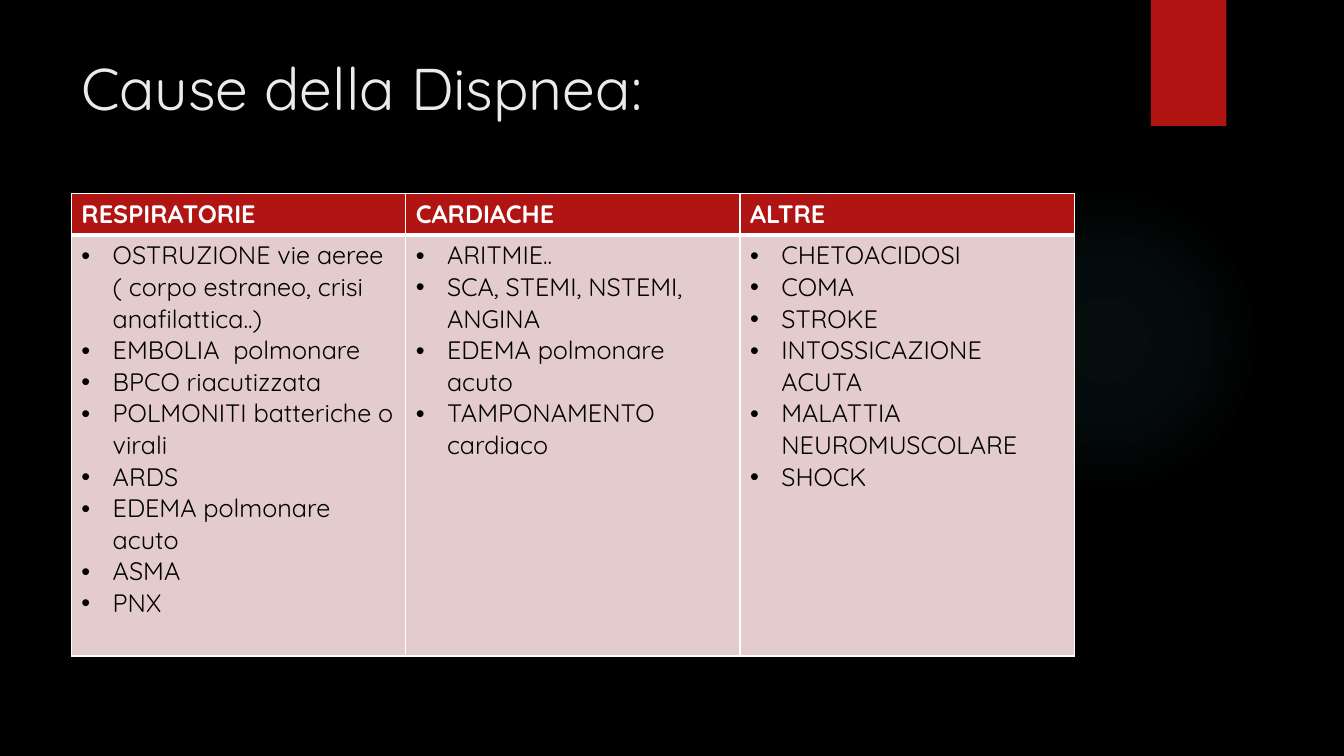
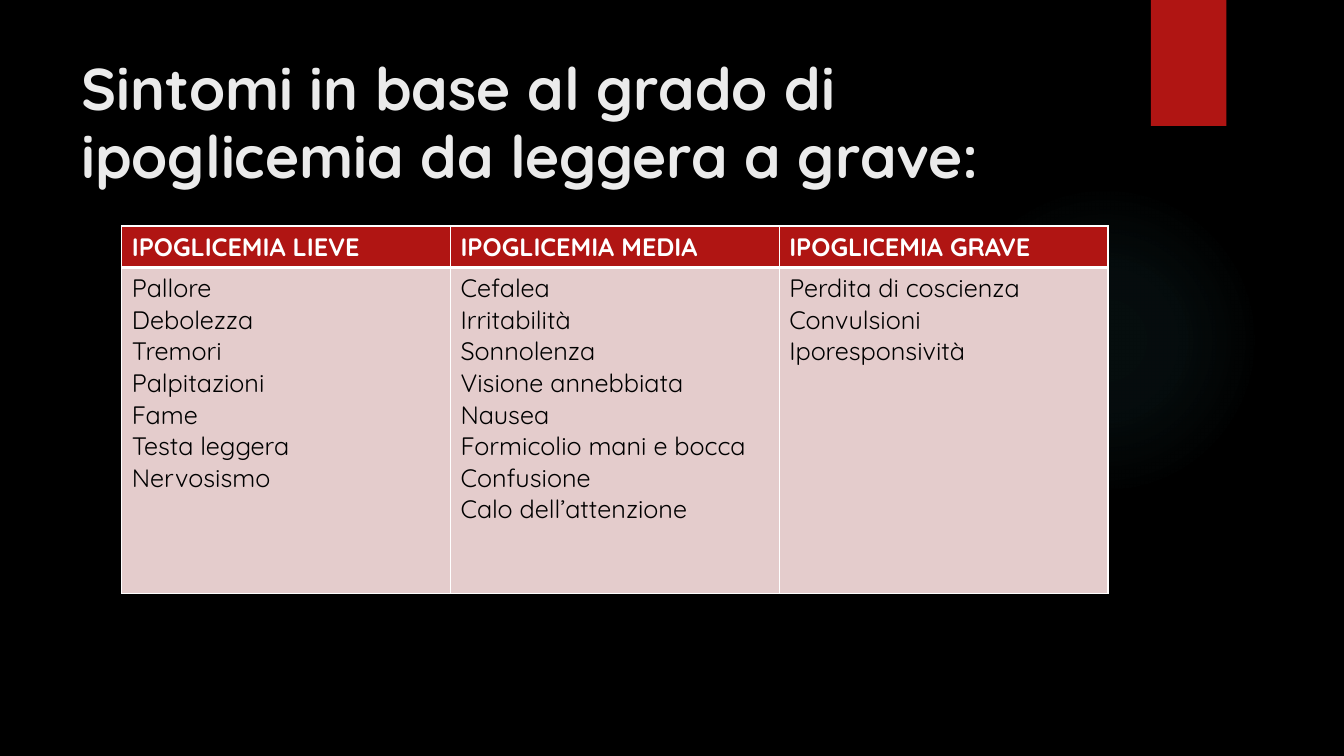
from lxml import etree
from pptx import Presentation
from pptx.dml.color import RGBColor
from pptx.enum.shapes import MSO_SHAPE
from pptx.enum.text import MSO_ANCHOR
from pptx.oxml import parse_xml
from pptx.oxml.ns import nsdecls, qn
from pptx.util import Inches, Pt

ELLIPSE = MSO_SHAPE.OVAL
RECTANGLE = MSO_SHAPE.RECTANGLE
TOP = MSO_ANCHOR.TOP

SLIDE_WIDTH = Inches(13.33)
SLIDE_HEIGHT = Inches(7.5)
COLUMN = SLIDE_WIDTH / 160
ROW = SLIDE_HEIGHT / 90

FONT = "Quicksand"
BLACK = "000000"
WHITE = "FFFFFF"
RED = "B01513"
PINK = "E4CCCC"
TITLE_COLOUR = "EBEBEB"
GLOW_COLOUR = "50B9C1"
GLOW_STOPS = [(0, 7), (36, 6), (69, 0)]

GLOW_BOX = (113, 22, 37, 37)
TAB_BOX = (137, 0, 9, 15)
TITLE_BOX = (8.5, 6, 123.5, 18.4)
HEADER_ROWS = 4.95
BULLET_INDENT = Inches(0.31)

SLIDES = [
    {
        "title": "Cause della Dispnea:",
        "bold": False,
        "box": (8.5, 23, 119.4, 55.1),
        "bullets": True,
        "columns": {
            "RESPIRATORIE": [
                "OSTRUZIONE vie aeree ( corpo estraneo, crisi anafilattica..)",
                "EMBOLIA  polmonare",
                "BPCO riacutizzata",
                "POLMONITI batteriche o virali",
                "ARDS",
                "EDEMA polmonare acuto",
                "ASMA",
                "PNX",
            ],
            "CARDIACHE": [
                "ARITMIE..",
                "SCA, STEMI, NSTEMI, ANGINA",
                "EDEMA polmonare acuto",
                "TAMPONAMENTO cardiaco",
            ],
            "ALTRE": [
                "CHETOACIDOSI",
                "COMA",
                "STROKE",
                "INTOSSICAZIONE ACUTA",
                "MALATTIA NEUROMUSCOLARE",
                "SHOCK",
            ],
        },
    },
    {
        "title": "Sintomi in base al grado di ipoglicemia da leggera a grave:",
        "bold": True,
        "box": (14.5, 26.9, 117.4, 43.8),
        "bullets": False,
        "columns": {
            "IPOGLICEMIA LIEVE": [
                "Pallore",
                "Debolezza",
                "Tremori",
                "Palpitazioni",
                "Fame",
                "Testa leggera",
                "Nervosismo",
            ],
            "IPOGLICEMIA MEDIA": [
                "Cefalea",
                "Irritabilità",
                "Sonnolenza",
                "Visione annebbiata",
                "Nausea",
                "Formicolio mani e bocca",
                "Confusione",
                "Calo dell’attenzione",
            ],
            "IPOGLICEMIA GRAVE": [
                "Perdita di coscienza",
                "Convulsioni",
                "Iporesponsività",
            ],
        },
    },
]


def colour(value):
    return RGBColor.from_string(value)


def place(box):
    left, top, width, height = box
    return (round(left * COLUMN), round(top * ROW),
            round(width * COLUMN), round(height * ROW))


def add_bullet(paragraph):
    properties = paragraph._p.get_or_add_pPr()
    properties.set("marL", str(BULLET_INDENT))
    properties.set("indent", str(-BULLET_INDENT))
    etree.SubElement(properties, qn("a:buFont")).set("typeface", "Arial")
    etree.SubElement(properties, qn("a:buChar")).set("char", "•")


def write_text(frame, lines, *, size=18, color=BLACK, bold=False,
               bullets=False, spacing=None):
    frame.word_wrap = True
    for index, line in enumerate(lines):
        paragraph = frame.add_paragraph() if index else frame.paragraphs[0]
        if bullets:
            add_bullet(paragraph)
        if spacing:
            paragraph.line_spacing = spacing
        run = paragraph.add_run()
        run.text = line
        run.font.name = FONT
        run.font.size = Pt(size)
        run.font.bold = bold
        run.font.color.rgb = colour(color)


def add_plain_shape(slide, kind, box, fill):
    shape = slide.shapes.add_shape(kind, *place(box))
    shape.shadow.inherit = False
    shape.line.fill.background()
    shape.fill.solid()
    shape.fill.fore_color.rgb = colour(fill)
    return shape


def add_glow(slide, box):
    shape = add_plain_shape(slide, ELLIPSE, box, GLOW_COLOUR)
    stops = "".join(
        f'<a:gs pos="{position * 1000}"><a:srgbClr val="{GLOW_COLOUR}">'
        f'<a:alpha val="{opacity * 1000}"/></a:srgbClr></a:gs>'
        for position, opacity in GLOW_STOPS)
    gradient = parse_xml(
        f'<a:gradFill {nsdecls("a")} rotWithShape="1"><a:gsLst>{stops}</a:gsLst>'
        '<a:path path="circle"><a:fillToRect l="50000" t="50000" r="50000" '
        'b="50000"/></a:path></a:gradFill>')
    properties = shape._element.spPr
    properties.replace(properties.find(qn("a:solidFill")), gradient)


def add_title(slide, box, text, bold):
    frame = slide.shapes.add_textbox(*place(box)).text_frame
    frame.vertical_anchor = TOP
    write_text(frame, [text], size=42, color=TITLE_COLOUR, bold=bold, spacing=0.97)


def set_borders(cell, **widths):
    properties = cell._tc.get_or_add_tcPr()
    for side in "LRTB":
        properties.append(parse_xml(
            f'<a:ln{side} {nsdecls("a")} w="{Pt(widths.get(side, 1))}"><a:solidFill>'
            f'<a:srgbClr val="{WHITE}"/></a:solidFill></a:ln{side}>'))


def fill_cell(cell, lines, fill, borders, **text_format):
    set_borders(cell, **borders)
    cell.fill.solid()
    cell.fill.fore_color.rgb = colour(fill)
    write_text(cell.text_frame, lines, **text_format)


def add_cause_table(slide, box, columns, bullets):
    left, top, width, height = place(box)
    table = slide.shapes.add_table(2, len(columns), left, top, width, height).table
    table.horz_banding = False
    header_height = round(HEADER_ROWS * ROW)
    table.rows[0].height = header_height
    table.rows[1].height = height - header_height
    for index, (heading, items) in enumerate(columns.items()):
        table.columns[index].width = width // len(columns)
        fill_cell(table.cell(0, index), [heading], RED, {"B": 3},
                  color=WHITE, bold=True)
        fill_cell(table.cell(1, index), items, PINK, {"T": 3}, bullets=bullets)


def build_table_slide(presentation, content):
    slide = presentation.slides.add_slide(presentation.slide_layouts[6])
    add_glow(slide, GLOW_BOX)
    add_plain_shape(slide, RECTANGLE, TAB_BOX, RED)
    add_title(slide, TITLE_BOX, content["title"], content["bold"])
    add_cause_table(slide, content["box"], content["columns"], content["bullets"])


def main():
    presentation = Presentation()
    presentation.slide_width = SLIDE_WIDTH
    presentation.slide_height = SLIDE_HEIGHT
    background = presentation.slide_master.background.fill
    background.solid()
    background.fore_color.rgb = colour(BLACK)
    for content in SLIDES:
        build_table_slide(presentation, content)
    presentation.save("out.pptx")


if __name__ == "__main__":
    main()
